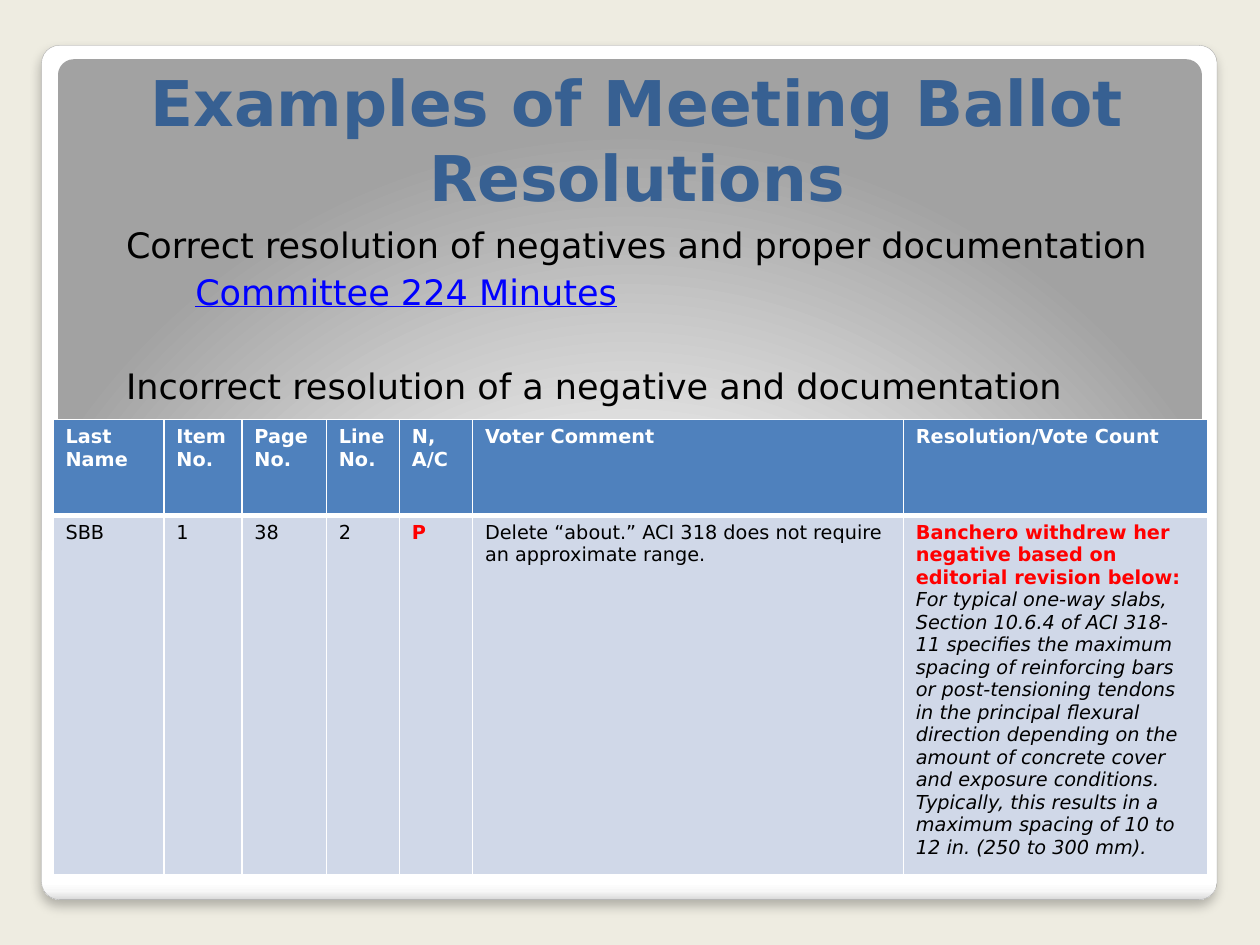
from dataclasses import dataclass

from pptx import Presentation
from pptx.dml.color import RGBColor
from pptx.enum.shapes import MSO_SHAPE as Shape
from pptx.enum.text import MSO_ANCHOR as Anchor, PP_ALIGN as Align
from pptx.oxml import parse_xml
from pptx.oxml.ns import nsdecls, qn
from pptx.util import Inches, Pt

FONT = "DejaVu Sans"
WHITE, BLACK, RED = "FFFFFF", "000000", "FF0000"
HEADER_FILL, ROW_FILL = "4F81BD", "D0D8E8"


@dataclass
class Panel:
    box: tuple
    stops: list
    direction: str


@dataclass
class Line:
    text: str
    color: str = BLACK
    bold: bool = False
    italic: bool = False
    underline: bool = False
    indent: float = 0
    before: float = 0


def color(value: str) -> RGBColor:
    return RGBColor.from_string(value)


def write(frame, lines: list, *, size: float, align=Align.LEFT) -> None:
    """Fill a text frame with one paragraph per line."""
    frame.word_wrap = True
    for index, line in enumerate(lines):
        paragraph = frame.add_paragraph() if index else frame.paragraphs[0]
        paragraph.alignment = align
        paragraph.space_before = Pt(line.before)
        if line.indent:
            properties = paragraph._p.get_or_add_pPr()
            properties.set("marL", str(Inches(line.indent)))
        run = paragraph.add_run()
        run.text = line.text
        font = run.font
        font.name, font.size = FONT, Pt(size)
        font.bold, font.italic, font.underline = line.bold, line.italic, line.underline
        font.color.rgb = color(line.color)


def add_text(slide, box: tuple, lines: list, *, anchor=Anchor.TOP, left=0.1,
             top=0.05, **text_format) -> None:
    frame = slide.shapes.add_textbox(*map(Inches, box)).text_frame
    frame.vertical_anchor = anchor
    frame.margin_left, frame.margin_top = Inches(left), Inches(top)
    write(frame, lines, **text_format)


def add_panel(slide, panel: Panel):
    """Draw a rounded panel with a gradient fill."""
    shape = slide.shapes.add_shape(Shape.ROUNDED_RECTANGLE, *map(Inches, panel.box))
    shape.adjustments[0] = 0.021
    shape.shadow.inherit = False
    shape.line.fill.background()
    shape.fill.gradient()
    stops = "".join(
        f'<a:gs pos="{position * 1000}"><a:srgbClr val="{value}"/></a:gs>'
        for position, value in panel.stops)
    gradient = parse_xml(f'<a:gradFill {nsdecls("a")} rotWithShape="1">'
                         f"<a:gsLst>{stops}</a:gsLst>{panel.direction}</a:gradFill>")
    properties = shape._element.spPr
    properties.replace(properties.find(qn("a:gradFill")), gradient)
    return shape


def add_soft_shadow(shape) -> None:
    effects = shape._element.spPr.find(qn("a:effectLst"))
    effects.append(parse_xml(
        f'<a:outerShdw {nsdecls("a")} blurRad="{Pt(6)}" dist="{Pt(4)}" dir="5400000" '
        'algn="tl" rotWithShape="0"><a:srgbClr val="000000"><a:alpha val="25000"/>'
        "</a:srgbClr></a:outerShdw>"))


def set_borders(cell, *, top: float = 1, bottom: float = 1) -> None:
    properties = cell._tc.get_or_add_tcPr()
    for index, (side, width) in enumerate(zip("LRTB", (1, 1, top, bottom))):
        properties.insert(index, parse_xml(
            f'<a:ln{side} {nsdecls("a")} w="{Pt(width)}"><a:solidFill>'
            f'<a:srgbClr val="{WHITE}"/></a:solidFill></a:ln{side}>'))


def add_ballot_table(slide, box: tuple, widths: list, heights: list, rows: list) -> None:
    table = slide.shapes.add_table(len(rows), len(widths), *map(Inches, box)).table
    for column, width in zip(table.columns, widths):
        column.width = Inches(width)
    for index, (row, height, contents) in enumerate(zip(table.rows, heights, rows)):
        row.height = Inches(height)
        for cell, lines in zip(row.cells, contents):
            cell.fill.solid()
            cell.fill.fore_color.rgb = color(ROW_FILL if index else HEADER_FILL)
            set_borders(cell, **({"top": 3} if index else {"bottom": 3}))
            write(cell.text_frame, lines, size=11)


OUTER = Panel((0.33, 0.36, 9.33, 6.78),
              [(0, WHITE), (98, WHITE), (99, "F7F7F7"), (100, "DADADA")],
              '<a:lin ang="5400000" scaled="0"/>')
INNER = Panel((0.46, 0.47, 9.08, 6),
              [(0, WHITE), (55, "E1E1E1"), (100, "A2A2A2")],
              '<a:path path="circle"><a:fillToRect l="50000" t="175000" '
              'r="50000" b="-75000"/></a:path>')

BODY = [
    Line("Correct resolution of negatives and proper documentation", indent=0.38, before=3),
    Line("Committee 224 Minutes", "0000FF", underline=True, indent=0.93, before=3),
    Line("Incorrect resolution of a negative and documentation", indent=0.38, before=30),
]

HEADINGS = ["Last Name", "Item No.", "Page No.", "Line No.", "N, A/C",
            "Voter Comment", "Resolution/Vote Count"]
REVISION = [
    "For typical one-way slabs, Section 10.6.4 of ACI 318-",
    "11 specifies the maximum spacing of reinforcing bars or post-tensioning tendons "
    "in the principal flexural",
    "direction depending on the amount of concrete cover",
    "and exposure conditions. Typically, this results in a",
    "maximum spacing of 10 to 12 in. (250 to 300 mm).",
]
BALLOT = [
    *([Line(text)] for text in ("SBB", "1", "38", "2")),
    [Line("P", RED, bold=True)],
    [Line("Delete “about.” ACI 318 does not require an approximate range.")],
    [Line("Banchero withdrew her negative based on editorial revision below:", RED, bold=True),
     *(Line(text, italic=True) for text in REVISION)],
]


def main() -> None:
    presentation = Presentation()
    presentation.slide_width, presentation.slide_height = Inches(10), Inches(7.5)
    slide = presentation.slides.add_slide(presentation.slide_layouts[6])
    slide.background.fill.solid()
    slide.background.fill.fore_color.rgb = color("EEECE1")

    # Frame
    frame = add_panel(slide, OUTER)
    frame.line.color.rgb = color("A4A4A4")
    frame.line.width = Pt(0.16)
    add_soft_shadow(frame)
    add_panel(slide, INNER)

    # Title and body
    add_text(slide, (0.58, 0.67, 8.95, 1.08),
             [Line("Examples of Meeting Ballot Resolutions", "376092", bold=True)],
             size=36, align=Align.CENTER, anchor=Anchor.BOTTOM)
    add_text(slide, (0.42, 1.67, 9.12, 5.5), BODY, size=20, left=0.2, top=0.1)

    # Ballot table
    header = [[Line(text, WHITE, bold=True)] for text in HEADINGS]
    add_ballot_table(slide, (0.42, 3.33, 9.17, 3.53),
                     [0.88, 0.62, 0.67, 0.58, 0.58, 3.42, 2.42], [0.76, 2.77],
                     [header, BALLOT])

    presentation.save("out.pptx")


if __name__ == "__main__":
    main()
